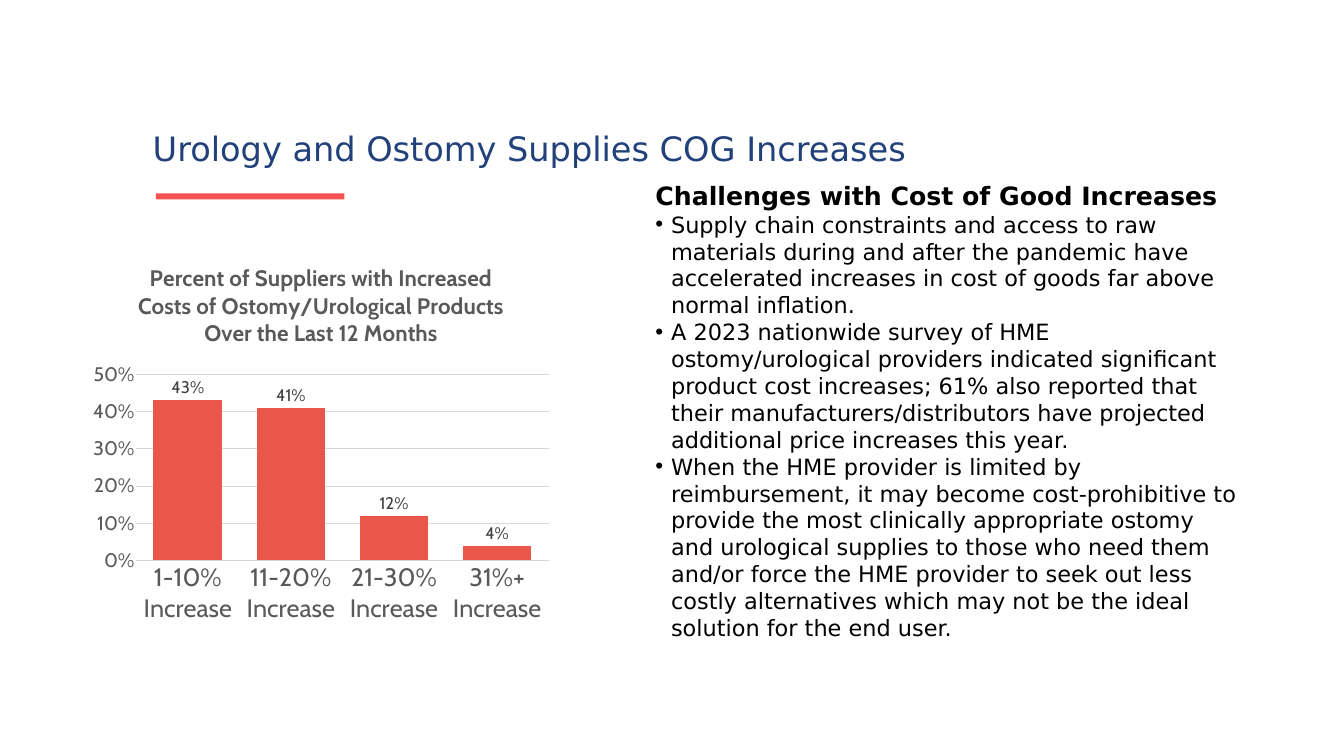
from dataclasses import dataclass

from lxml import etree
from pptx import Presentation
from pptx import util as u
from pptx.chart.data import CategoryChartData
from pptx.dml.color import RGBColor
from pptx.enum import chart as ch, shapes, text
from pptx.oxml import parse_xml
from pptx.oxml.ns import nsdecls, qn


@dataclass(frozen=True)
class Theme:
    text_font: str = "DejaVu Sans"
    chart_font: str = "Cabin"
    navy: str = "22417B"
    black: str = "000000"
    accent: str = "F75152"
    bar: str = "E9564A"
    axis: str = "595959"
    label: str = "404040"
    grid: str = "D9D9D9"
    title_size: int = 48
    heading_size: int = 36
    body_size: int = 32
    category_size: int = 36
    value_size: int = 28
    label_size: int = 24


@dataclass(frozen=True)
class Box:
    """Position and size in centimetres."""
    left: float
    top: float
    width: float
    height: float

    def lengths(self) -> tuple:
        return tuple(u.Cm(n) for n in (self.left, self.top, self.width, self.height))


@dataclass(frozen=True)
class CostShare:
    increase: str
    share: float


THEME = Theme()
TITLE_BOX = Box(7.44, 3.76, 54.94, 5.77)
RULE_BOX = Box(7.85, 9.75, 9.5, 0.3)
BODY_BOX = Box(32.77, 8.97, 30.05, 17.81)
CHART_BOX = Box(4.24, 12.52, 23.88, 19.18)
PLOT_AREA = {"x": 0.11, "y": 0.33, "w": 0.87, "h": 0.49}
BULLET_INDENT = u.Cm(0.79)

HEADING = "Challenges with Cost of Good Increases"
CHALLENGES = [
    "Supply chain constraints and access to raw materials during and after the "
    "pandemic have accelerated increases in cost of goods far above normal inflation.",
    "A 2023 nationwide survey of HME ostomy/urological providers indicated significant "
    "product cost increases; 61% also reported that their manufacturers/distributors "
    "have projected additional price increases this year.",
    "When the HME provider is limited by reimbursement, it may become cost-prohibitive "
    "to provide the most clinically appropriate ostomy and urological supplies to those "
    "who need them and/or force the HME provider to seek out less costly alternatives "
    "which may not be the ideal solution for the end user.",
]
CHART_TITLE = ("Percent of Suppliers with Increased Costs of "
               "Ostomy/Urological Products Over the Last 12 Months")
COST_SHARES = [
    CostShare("1-10% Increase", 0.43),
    CostShare("11-20% Increase", 0.41),
    CostShare("21-30% Increase", 0.12),
    CostShare("31%+ Increase", 0.04),
]


def style_font(font, name: str, size: int, color: str, bold: bool = False) -> None:
    font.name, font.size, font.bold = name, u.Pt(size), bold
    font.color.rgb = RGBColor.from_string(color)


def place(placeholder, box: Box):
    placeholder.left, placeholder.top, placeholder.width, placeholder.height = box.lengths()
    frame = placeholder.text_frame
    frame.word_wrap = True
    frame.auto_size = text.MSO_AUTO_SIZE.NONE
    frame.vertical_anchor = text.MSO_ANCHOR.TOP
    return frame


def set_bullet(paragraph, bullet: str = "") -> None:
    """Hang the paragraph behind a bullet, or clear the inherited one."""
    properties = paragraph._p.get_or_add_pPr()
    indent = BULLET_INDENT if bullet else 0
    properties.set("marL", str(indent))
    properties.set("indent", str(-indent))
    if bullet:
        etree.SubElement(properties, qn("a:buFont")).set("typeface", "Arial")
        etree.SubElement(properties, qn("a:buChar")).set("char", bullet)
    else:
        etree.SubElement(properties, qn("a:buNone"))


def add_title(slide) -> None:
    title = place(slide.shapes.title, TITLE_BOX).paragraphs[0]
    title.text = "Urology and Ostomy Supplies COG Increases"
    title.alignment = text.PP_ALIGN.LEFT
    title.line_spacing = u.Pt(130)
    style_font(title.font, THEME.text_font, THEME.title_size, THEME.navy)

    rule = slide.shapes.add_shape(shapes.MSO_SHAPE.RECTANGLE, *RULE_BOX.lengths())
    rule.shadow.inherit = False
    rule.fill.solid()
    rule.fill.fore_color.rgb = RGBColor.from_string(THEME.accent)
    rule.line.fill.background()


def add_challenges(slide) -> None:
    frame = place(slide.placeholders[1], BODY_BOX)
    heading = frame.paragraphs[0]
    heading.text = HEADING
    heading.space_before = u.Pt(0)
    set_bullet(heading)
    style_font(heading.font, THEME.text_font, THEME.heading_size, THEME.black, bold=True)
    for challenge in CHALLENGES:
        item = frame.add_paragraph()
        item.text = challenge
        item.space_before = u.Pt(0)
        set_bullet(item, "•")
        style_font(item.font, THEME.text_font, THEME.body_size, THEME.black)


def style_axis(axis, size: int) -> None:
    axis.major_tick_mark = axis.minor_tick_mark = ch.XL_TICK_MARK.NONE
    style_font(axis.tick_labels.font, THEME.chart_font, size, THEME.axis)


def style_line(line) -> None:
    line.color.rgb = RGBColor.from_string(THEME.grid)
    line.width = u.Pt(0.75)


def fix_plot_area(chart) -> None:
    """Set the inner plot area as fractions of the chart."""
    plot_area = chart._chartSpace.chart.plotArea
    for layout in plot_area.findall(qn("c:layout")):
        plot_area.remove(layout)
    sizes = "".join(f'<c:{key} val="{value}"/>' for key, value in PLOT_AREA.items())
    plot_area.insert(0, parse_xml(
        f'<c:layout {nsdecls("c")}><c:manualLayout><c:layoutTarget val="inner"/>'
        f'<c:xMode val="edge"/><c:yMode val="edge"/>{sizes}</c:manualLayout></c:layout>'))


def add_cost_chart(slide) -> None:
    data = CategoryChartData(number_format="0%")
    data.categories = [row.increase for row in COST_SHARES]
    data.add_series("Series 1", [row.share for row in COST_SHARES])
    chart = slide.shapes.add_chart(
        ch.XL_CHART_TYPE.COLUMN_CLUSTERED, *CHART_BOX.lengths(), data).chart
    chart.has_legend = False
    style_font(chart.font, THEME.chart_font, 20, THEME.black)

    heading = chart.chart_title.text_frame.paragraphs[0]
    heading.text = CHART_TITLE
    style_font(heading.font, THEME.chart_font, THEME.body_size, THEME.axis, bold=True)
    chart.chart_title.include_in_layout = False

    style_axis(chart.category_axis, THEME.category_size)
    style_line(chart.category_axis.format.line)
    shares = chart.value_axis
    style_axis(shares, THEME.value_size)
    shares.minimum_scale, shares.maximum_scale, shares.major_unit = 0, 0.5, 0.1
    shares.tick_labels.number_format = "0%"
    shares.tick_labels.number_format_is_linked = False
    shares.format.line.fill.background()
    style_line(shares.major_gridlines.format.line)

    plot = chart.plots[0]
    plot.vary_by_categories = False
    plot.gap_width, plot.overlap = 50, -27
    bars = plot.series[0]
    bars.format.fill.solid()
    bars.format.fill.fore_color.rgb = RGBColor.from_string(THEME.bar)
    labels = bars.data_labels
    labels.show_value = True
    labels.number_format, labels.number_format_is_linked = "0%", False
    labels.position = ch.XL_LABEL_POSITION.OUTSIDE_END
    style_font(labels.font, THEME.chart_font, THEME.label_size, THEME.label)
    fix_plot_area(chart)


def main() -> None:
    deck = Presentation()
    deck.slide_width, deck.slide_height = u.Cm(67.72), u.Cm(38.1)
    slide = deck.slides.add_slide(deck.slide_layouts[1])
    add_title(slide)
    add_challenges(slide)
    add_cost_chart(slide)
    deck.save("out.pptx")


if __name__ == "__main__":
    main()
